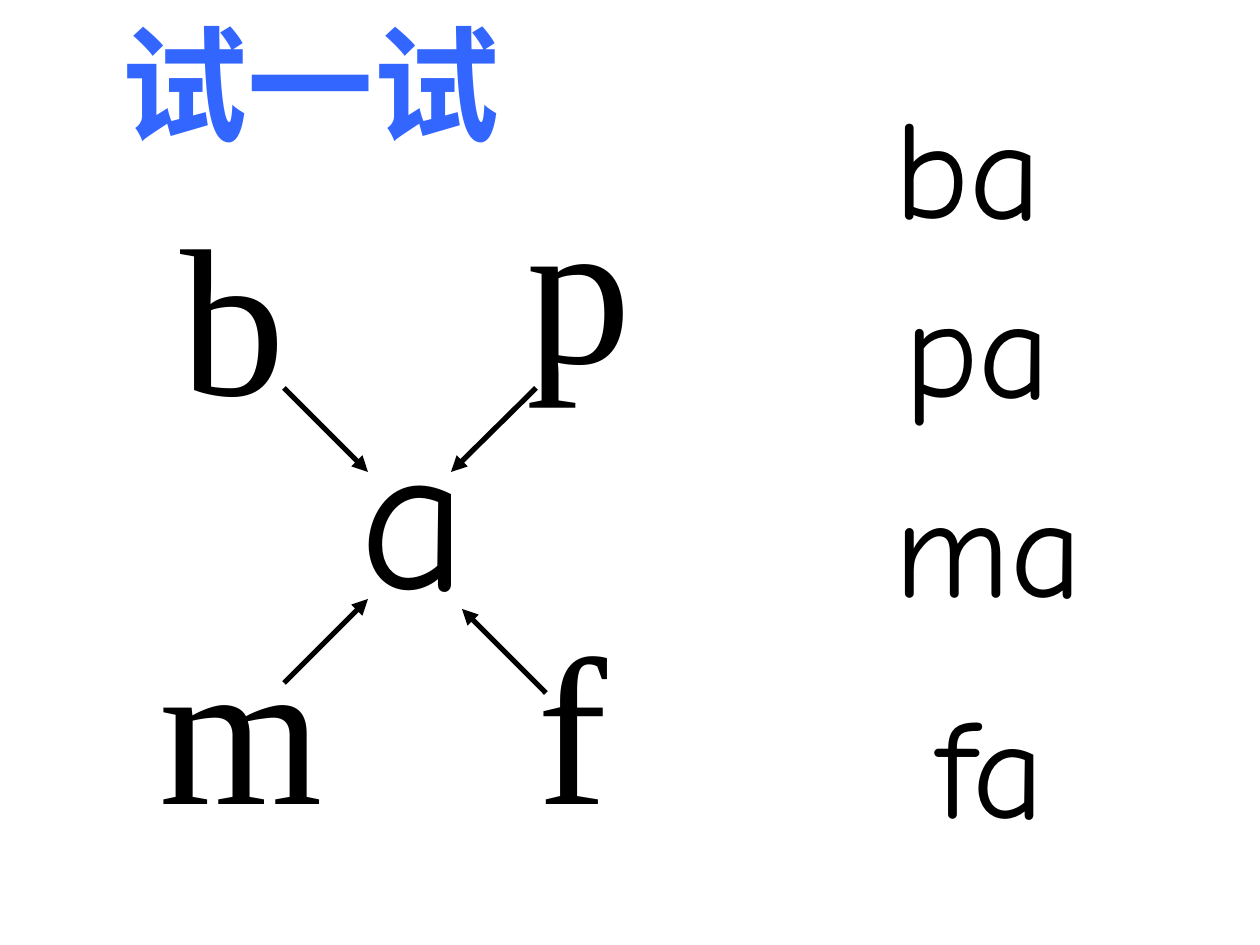
from pptx import Presentation
from pptx.dml.color import RGBColor
from pptx.enum.shapes import MSO_CONNECTOR as Connector
from pptx.enum.text import MSO_AUTO_SIZE as AutoSize, PP_ALIGN as Align
from pptx.oxml.ns import qn
from pptx.util import Emu, Pt
from lxml.etree import SubElement

PX_PER_INCH = 126
BLACK = RGBColor(0x00, 0x00, 0x00)
BLUE = RGBColor(0x33, 0x66, 0xFF)
WHITE = RGBColor(0xFF, 0xFF, 0xFF)
SERIF = "Times New Roman"
ROUND = "Comic Neue"
CHINESE = "Noto Sans CJK JP"

LETTERS = [
    ("b", (168, 179, 134, 265), (284, 388), (368, 472)),
    ("m", (147, 588, 189, 265), (284, 683), (368, 599)),
    ("f", (525, 588, 117, 265), (546, 693), (462, 609)),
    ("p", (514, 147, 130, 265), (536, 388), (451, 472)),
]
SYLLABLES = [
    ("ba", (882, 73, 180, 180)),
    ("pa", (892, 252, 171, 180)),
    ("ma", (882, 451, 238, 180)),
    ("fa", (924, 672, 168, 180)),
]


def px(length):
    return Emu(round(length * 914400 / PX_PER_INCH))


def format_run(run, *, size, font, color=BLACK, bold=False):
    run.font.size = Pt(size)
    run.font.name = font
    run.font.bold = bold
    run.font.color.rgb = color
    for tag in ("a:ea", "a:cs"):
        SubElement(run.font._element, qn(tag), typeface=font)


class SlideBuilder:
    def __init__(self, slide):
        self.slide = slide
        slide.background.fill.solid()
        slide.background.fill.fore_color.rgb = WHITE

    def text(self, text, box, *, parent=None, align=Align.LEFT, **style):
        shapes = (parent or self.slide).shapes
        shape = shapes.add_textbox(*map(px, box))
        frame = shape.text_frame
        frame.word_wrap = False
        frame.auto_size = AutoSize.NONE
        paragraph = frame.paragraphs[0]
        paragraph.alignment = align
        run = paragraph.add_run()
        run.text = text
        format_run(run, **style)

    def arrow(self, start, end, *, parent):
        connector = parent.shapes.add_connector(
            Connector.STRAIGHT, *map(px, start + end))
        connector.line.color.rgb = BLACK
        connector.line.width = Pt(3)
        SubElement(connector.line._get_or_add_ln(), qn("a:tailEnd"), type="triangle")
        SubElement(connector._element.spPr, qn("a:effectLst"))

    def letter_with_arrow(self, letter, box, start, end):
        group = self.slide.shapes.add_group_shape()
        self.text(letter, box, parent=group, size=120, font=SERIF)
        self.arrow(start, end, parent=group)


def main():
    presentation = Presentation()
    presentation.slide_width = px(1260)
    presentation.slide_height = px(945)
    builder = SlideBuilder(presentation.slides.add_slide(presentation.slide_layouts[6]))

    builder.text("a", (347, 373, 132, 265), size=120, font=ROUND)
    for letter in LETTERS:
        builder.letter_with_arrow(*letter)
    for syllable, box in SYLLABLES:
        builder.text(syllable, box, size=80, font=ROUND)
    builder.text("试一试", (42, 0, 536, 215), align=Align.CENTER,
                 size=72, font=CHINESE, color=BLUE, bold=True)

    presentation.save("out.pptx")


if __name__ == "__main__":
    main()
